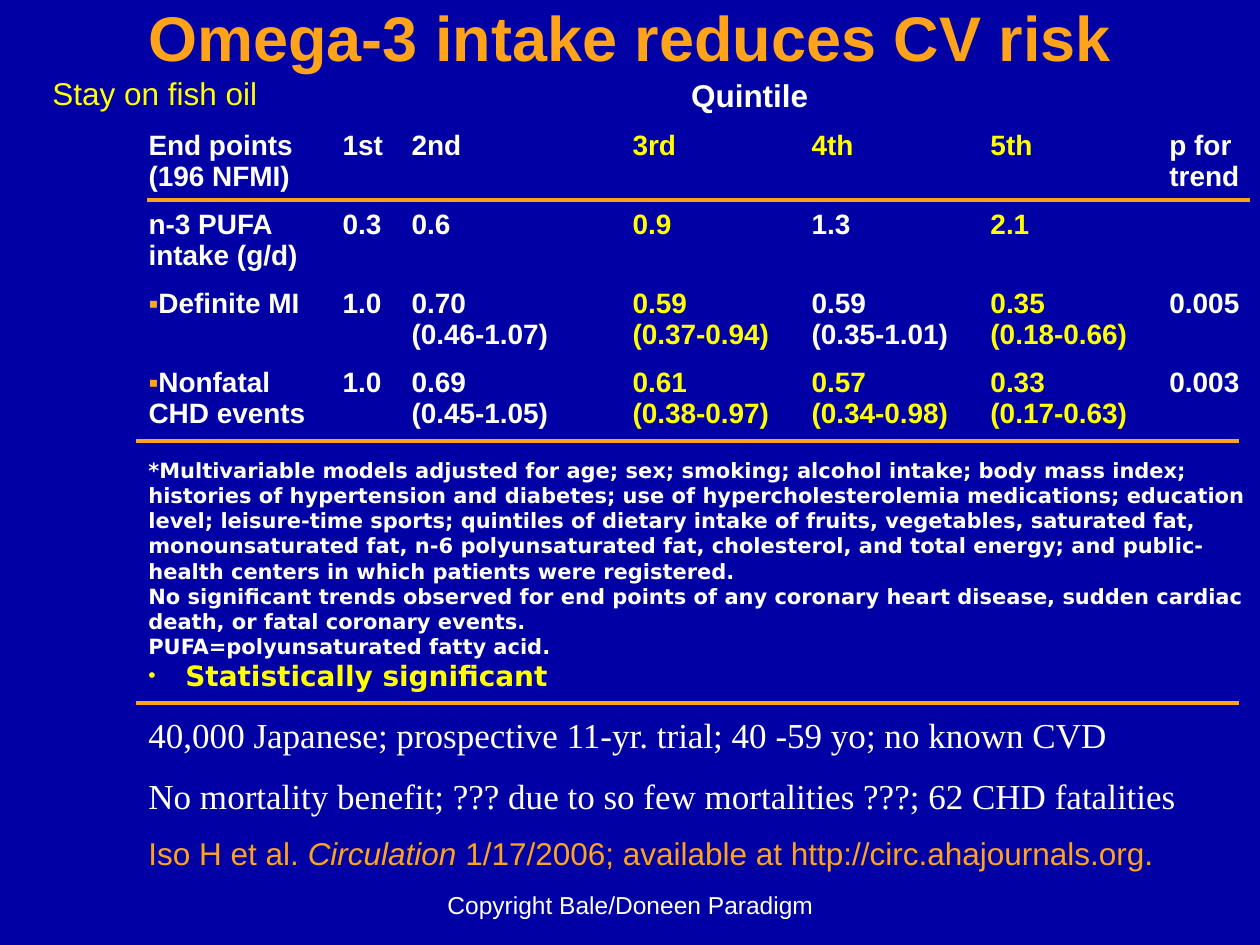
from dataclasses import dataclass

from lxml.etree import SubElement
from pptx import Presentation
from pptx.dml.color import RGBColor as RGB
from pptx.enum.shapes import MSO_CONNECTOR as CONN
from pptx.enum.text import MSO_ANCHOR as ANCHOR, PP_ALIGN as ALIGN
from pptx.oxml.ns import qn
from pptx.util import Emu, Pt

SCALE = 914400 / 126


@dataclass(frozen=True)
class Theme:
    """Colours, fonts and type sizes of the slide."""
    back: str = "0000A4"
    text: str = "FFFFFF"
    accent: str = "FFA31B"
    mark: str = "FFFF00"
    sans: str = "Arial"
    serif: str = "Times New Roman"
    note: str = "DejaVu Sans"
    title_pt: int = 36
    study_pt: int = 20
    label_pt: int = 18
    cell_pt: int = 16
    footer_pt: int = 14
    note_pt: int = 12
    rule_pt: float = 2.25


T = Theme()
NO_GRID = "{2D5ABB26-0587-4C30-8999-92F81FD0307C}"
COLS = [194, 69, 221, 179, 179, 179, 103]
HEIGHTS = [47, 79, 79, 79, 112]
ROWS = [
    ["", "Quintile", "", "", "", "", ""],
    ["End points\n(196 NFMI)", "1st", "2nd", "3rd", "4th", "5th", "p for trend"],
    ["n-3 PUFA intake (g/d)", "0.3", "0.6", "0.9", "1.3", "2.1", ""],
    ["Definite MI", "1.0", "0.70\n(0.46-1.07)", "0.59\n(0.37-0.94)",
     "0.59\n(0.35-1.01)", "0.35\n(0.18-0.66)", "0.005"],
    ["Nonfatal CHD events", "1.0", "0.69\n(0.45-1.05)", "0.61\n(0.38-0.97)",
     "0.57\n(0.34-0.98)", "0.33\n(0.17-0.63)", "0.003"],
]
MARKED = {(r, c) for r in range(1, 5) for c in (3, 5)} | {(1, 4), (4, 4)}
BULLETED = {(3, 0), (4, 0)}
NOTES = [
    "*Multivariable models adjusted for age; sex; smoking; alcohol intake; body mass index; "
    "histories of hypertension and diabetes; use of hypercholesterolemia medications; "
    "education level; leisure-time sports; quintiles of dietary intake of fruits, vegetables, "
    "saturated fat, monounsaturated fat, n-6 polyunsaturated fat, cholesterol, and total energy; "
    "and public-health centers in which patients were registered.",
    "No significant trends observed for end points of any coronary heart disease, "
    "sudden cardiac death, or fatal coronary events.",
    "PUFA=polyunsaturated fatty acid.",
    "Statistically significant",
]
STUDY = [
    "40,000 Japanese; prospective 11-yr. trial; 40 -59 yo; no known CVD",
    "No mortality benefit; ??? due to so few mortalities ???; 62 CHD fatalities",
]
CITATION = ["Iso H et al. ", "Circulation", " 1/17/2006; available at http://circ.ahajournals.org."]


def px(n):
    """Turn pixels into EMU."""
    return Emu(round(n * SCALE))


def style(p, size, color, font=T.sans, bold=False, align=ALIGN.LEFT):
    """Format every run of a paragraph."""
    p.alignment = align
    for r in p.runs:
        r.font.size, r.font.name, r.font.bold = Pt(size), font, bold
        r.font.color.rgb = RGB.from_string(color)


def bullet(p, char, color, indent=0, percent=100):
    """Give a paragraph a coloured bullet with a hanging indent."""
    pPr = p._p.get_or_add_pPr()
    pPr.set("marL", str(px(indent)))
    pPr.set("indent", str(-px(indent)))
    SubElement(SubElement(pPr, qn("a:buClr")), qn("a:srgbClr")).set("val", color)
    SubElement(pPr, qn("a:buSzPct")).set("val", str(percent * 1000))
    SubElement(pPr, qn("a:buFont")).set("typeface", T.sans)
    SubElement(pPr, qn("a:buChar")).set("char", char)


def place(sp, x, y, w, h):
    """Move and size a shape."""
    sp.left, sp.top, sp.width, sp.height = map(px, (x, y, w, h))


def add_title(s, text):
    """Fill and format the title placeholder."""
    sp = s.shapes.title
    place(sp, 0, 0, 1260, 73)
    tf = sp.text_frame
    tf.text, tf.vertical_anchor = text, ANCHOR.MIDDLE
    style(tf.paragraphs[0], T.title_pt, T.accent, bold=True, align=ALIGN.CENTER)


def add_text(s, box, lines, wrap=True):
    """Add a text box with one paragraph per line."""
    tf = s.shapes.add_textbox(*map(px, box)).text_frame
    tf.text, tf.word_wrap = "\n".join(lines), wrap
    return tf


def add_rule(s, x, y):
    """Add a horizontal rule."""
    ln = s.shapes.add_connector(CONN.STRAIGHT, px(x), px(y), px(x + 1103), px(y))
    ln.line.color.rgb, ln.line.width = RGB.from_string(T.accent), Pt(T.rule_pt)
    SubElement(ln._element.spPr, qn("a:effectLst"))


def fill_cell(cell, row, col):
    """Write and format one table cell."""
    cell.fill.background()
    cell.margin_right = 0
    cell.text = ROWS[row][col]
    head = row == 0
    for p in cell.text_frame.paragraphs:
        if (row, col) in BULLETED:
            bullet(p, "▪", T.accent)
        style(p, T.cell_pt if row else T.label_pt,
              T.mark if (row, col) in MARKED else T.text,
              bold=True, align=ALIGN.CENTER if head else ALIGN.LEFT)


def add_results(s):
    """Add the table of end points by quintile."""
    frame = s.shapes.add_table(len(ROWS), len(COLS), px(136), px(73), px(sum(COLS)), px(sum(HEIGHTS)))
    table = frame.table
    table.first_row = table.horz_banding = False
    table._tbl.tblPr.find(qn("a:tableStyleId")).text = NO_GRID
    for column, w in zip(table.columns, COLS):
        column.width = px(w)
    for i, (row, h) in enumerate(zip(table.rows, HEIGHTS)):
        row.height = px(h)
        for j, cell in enumerate(row.cells):
            fill_cell(cell, i, j)
    table.cell(0, 1).merge(table.cell(0, 5))


def add_notes(s):
    """Add the notes below the table."""
    *notes, key = add_text(s, (136, 451, 1124, 248), NOTES).paragraphs
    for p in notes:
        style(p, T.note_pt, T.text, T.note, bold=True)
    bullet(key, "•", T.mark, indent=37, percent=75)
    style(key, T.cell_pt, T.mark, T.note, bold=True)


def add_study(s):
    """Add the study facts and the citation."""
    tf = add_text(s, (136, 707, 1113, 175), STUDY)
    for p in tf.paragraphs:
        style(p, T.study_pt, T.text, T.serif)
    tf.paragraphs[1].space_before = Pt(11)
    p = tf.add_paragraph()
    p.space_before = Pt(10)
    for text in CITATION:
        p.add_run().text = text
    style(p, T.label_pt, T.accent)
    p.runs[1].font.italic = True


def main():
    """Build and save the slide."""
    prs = Presentation()
    prs.slide_width, prs.slide_height = px(1260), px(945)
    s = prs.slides.add_slide(prs.slide_layouts[5])
    s.background.fill.solid()
    s.background.fill.fore_color.rgb = RGB.from_string(T.back)
    add_title(s, "Omega-3 intake reduces CV risk")
    add_results(s)
    add_notes(s)
    add_study(s)
    for x, y in ((147, 200), (136, 441), (136, 703)):
        add_rule(s, x, y)
    tip = add_text(s, (40, 68, 231, 50), ["Stay on fish oil"], wrap=False)
    style(tip.paragraphs[0], T.label_pt, T.mark)
    footer = add_text(s, (431, 861, 399, 65), ["Copyright Bale/Doneen Paradigm"])
    footer.vertical_anchor = ANCHOR.BOTTOM
    style(footer.paragraphs[0], T.footer_pt, T.text, align=ALIGN.CENTER)
    prs.save("out.pptx")


if __name__ == "__main__":
    main()
